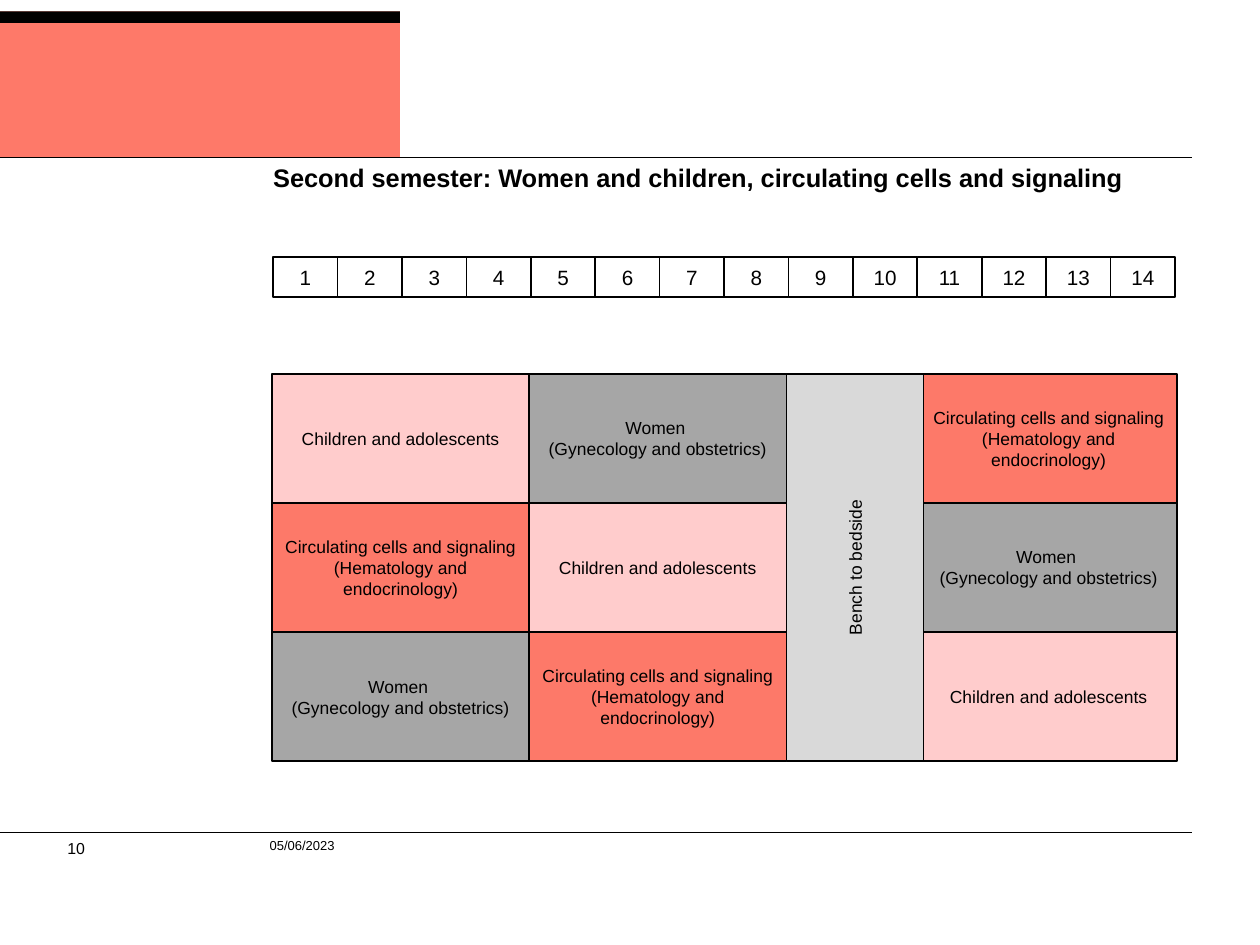
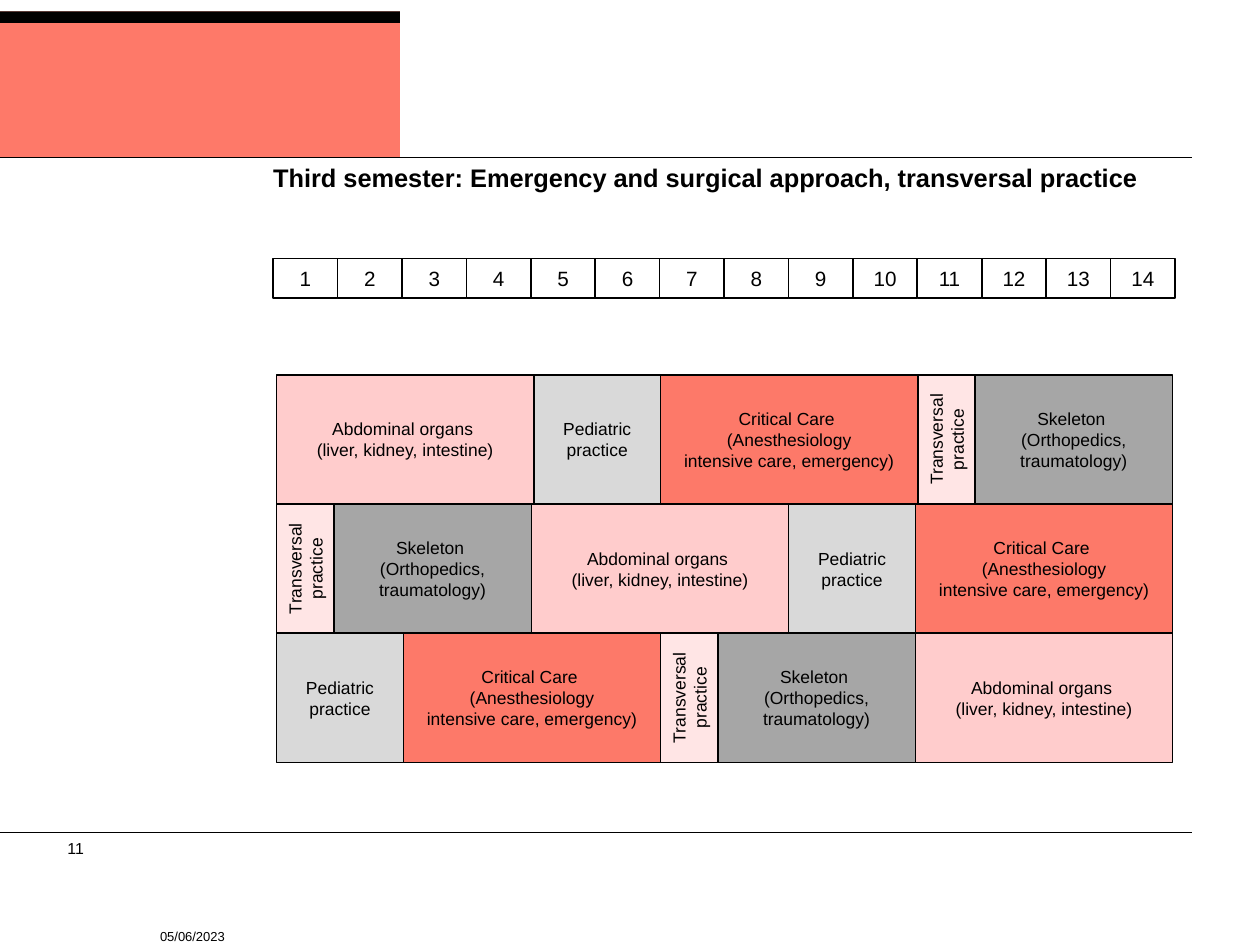
from lxml import etree
from pptx import Presentation
from pptx.dml.color import RGBColor
from pptx.enum.shapes import MSO_CONNECTOR as Connector, MSO_SHAPE as Shape
from pptx.enum.text import MSO_ANCHOR as Anchor, PP_ALIGN as Align
from pptx.oxml.ns import qn
from pptx.util import Inches, Pt

CM_PER_INCH = 2.54
PAGE_WIDTH, PAGE_HEIGHT = 28 / CM_PER_INCH, 21 / CM_PER_INCH
BLACK, WHITE, CORAL, BAND = "000000", "FFFFFF", "FD7969", "FE7969"
PINK, GREY, PALE = "FFCCCC", "A6A6A6", "D9D9D9"
RULE_RIGHT = 10.43
ROW_HEIGHT = 1.13
BENCH_GAP = 1.17

CHILDREN = {"text": "Children and adolescents", "fill": PINK, "width": 2.25}
WOMEN = {"text": "Women \n(Gynecology and obstetrics)", "fill": GREY, "width": 2.25}
CELLS = {"text": "Circulating cells and signaling (Hematology and endocrinology)",
         "fill": CORAL, "width": 2.25}
BENCH = {"text": "Bench to bedside", "fill": PALE, "width": 1.2, "upright": True}
ABDOMINAL = {"text": "Abdominal organs \n(liver, kidney, intestine)", "fill": PINK, "width": 2.25}
PEDIATRIC = {"text": "Pediatric practice", "fill": PALE, "width": 1.11}
CRITICAL = {"text": "Critical Care \v(Anesthesiology\nintensive care, emergency)",
            "fill": CORAL, "width": 2.25}
TRANSVERSAL = {"text": "Transversal practice", "fill": PINK, "width": 0.5,
               "upright": True, "alpha": 50}
SKELETON = {"text": "Skeleton \n(Orthopedics,\vtraumatology)", "fill": GREY, "width": 1.73}

SECOND_SEMESTER = [
    [CHILDREN, WOMEN, None, CELLS],
    [CELLS, CHILDREN, None, WOMEN],
    [WOMEN, CELLS, None, CHILDREN],
]
THIRD_SEMESTER = [
    [ABDOMINAL, PEDIATRIC, CRITICAL, TRANSVERSAL, SKELETON],
    [TRANSVERSAL, SKELETON, ABDOMINAL, PEDIATRIC, CRITICAL],
    [PEDIATRIC, CRITICAL, TRANSVERSAL, SKELETON, ABDOMINAL],
]


def colour(hex_string):
    return RGBColor.from_string(hex_string)


def write(frame, text, size, align=Align.LEFT, bold=False):
    frame.text = text
    style = {"name": "Arial", "size": Pt(size), "bold": bold}
    for paragraph in frame.paragraphs:
        paragraph.alignment = align
        for run in paragraph.runs:
            for key, value in style.items():
                setattr(run.font, key, value)
            run.font.color.rgb = colour(BLACK)


def add_label(slide, text, left, top, width, height, size, bold=False, wrap=True):
    frame = slide.shapes.add_textbox(*map(Inches, (left, top, width, height))).text_frame
    layout = {"margin_left": 0, "margin_top": 0, "margin_right": 0, "margin_bottom": 0,
              "word_wrap": wrap}
    for key, value in layout.items():
        setattr(frame, key, value)
    write(frame, text, size, bold=bold)


def add_block(parent, left, top, width, height, fill, outlined=True):
    block = parent.shapes.add_shape(Shape.RECTANGLE, *map(Inches, (left, top, width, height)))
    block.shadow.inherit = False
    block.fill.solid()
    block.fill.fore_color.rgb = colour(fill)
    if outlined:
        block.line.color.rgb = colour(BLACK)
        block.line.width = Pt(1)
    else:
        block.line.fill.background()
    return block


def add_cell(parent, left, top, width, height, text, fill, size=11, upright=False, alpha=None):
    cell = add_block(parent, left, top, width, height, fill)
    frame = cell.text_frame
    layout = {"word_wrap": True, "vertical_anchor": Anchor.MIDDLE}
    if upright:
        layout.update(margin_left=Inches(0.04), margin_right=Inches(0.04))
        frame._txBody.bodyPr.set("vert", "vert270")
    for key, value in layout.items():
        setattr(frame, key, value)
    write(frame, text, size, Align.CENTER)
    if alpha:
        tint = cell._element.spPr.find(qn("a:solidFill"))[0]
        etree.SubElement(tint, qn("a:alpha")).set("val", str(alpha * 1000))


def add_rule(slide, top):
    rule = slide.shapes.add_connector(
        Connector.STRAIGHT, *map(Inches, (0, top, RULE_RIGHT, top)))
    rule.line.color.rgb = colour(BLACK)
    rule.line.width = Pt(0.3)
    etree.SubElement(rule._element.spPr, qn("a:effectLst"))


def add_page(deck, title, number, date_left, date_top):
    slide = deck.slides.add_slide(deck.slide_layouts[6])
    add_rule(slide, 7.28)
    add_label(slide, number, 0.59, 7.34, 0.17, 0.17, 10, wrap=False)
    add_block(slide, 0, 0.1, 3.5, 1.28, BAND, outlined=False)
    add_block(slide, 0, 0.1, 3.5, 0.1, BLACK, outlined=False)
    add_rule(slide, 1.38)
    add_label(slide, title, 2.39, 1.42, 7.91, 1.07, 16, bold=True)
    add_label(slide, "05/06/2023", date_left, date_top, 7.18, 0.26, 8.2)
    return slide


def add_weeks(slide, left, top, width, height, count=14):
    weeks = slide.shapes.add_group_shape()
    step = width / count
    for week in range(count):
        add_cell(weeks, left + week * step, top, step, height, str(week + 1), WHITE, size=13)


def add_module(schedule, left, top, height, module):
    options = {key: value for key, value in module.items() if key != "width"}
    add_cell(schedule, left, top, module["width"], height, **options)


def add_schedule(slide, left, top, rows):
    schedule = slide.shapes.add_group_shape()
    for index, row in enumerate(rows):
        module_left = left
        for module in row:
            if module:
                add_module(schedule, module_left, top + index * ROW_HEIGHT, ROW_HEIGHT, module)
            module_left += module["width"] if module else BENCH_GAP
    return schedule


def add_second_semester(deck):
    slide = add_page(deck, "Second semester: Women and children, circulating cells and signaling",
                     "10", 2.36, 7.33)
    left, top = 2.38, 3.27
    schedule = add_schedule(slide, left, top, SECOND_SEMESTER)
    bench_left = left + CHILDREN["width"] + WOMEN["width"]
    add_module(schedule, bench_left, top, len(SECOND_SEMESTER) * ROW_HEIGHT, BENCH)
    add_weeks(slide, 2.39, 2.25, 7.89, 0.35)


def add_third_semester(deck):
    slide = add_page(deck, "Third semester: Emergency and surgical approach, transversal practice",
                     "11", 1.4, 8.12)
    add_weeks(slide, 2.39, 2.26, 7.89, 0.35)
    add_schedule(slide, 2.42, 3.28, THIRD_SEMESTER)


def main():
    deck = Presentation()
    deck.slide_width, deck.slide_height = Inches(PAGE_WIDTH), Inches(PAGE_HEIGHT)
    add_second_semester(deck)
    add_third_semester(deck)
    deck.save("out.pptx")


if __name__ == "__main__":
    main()
